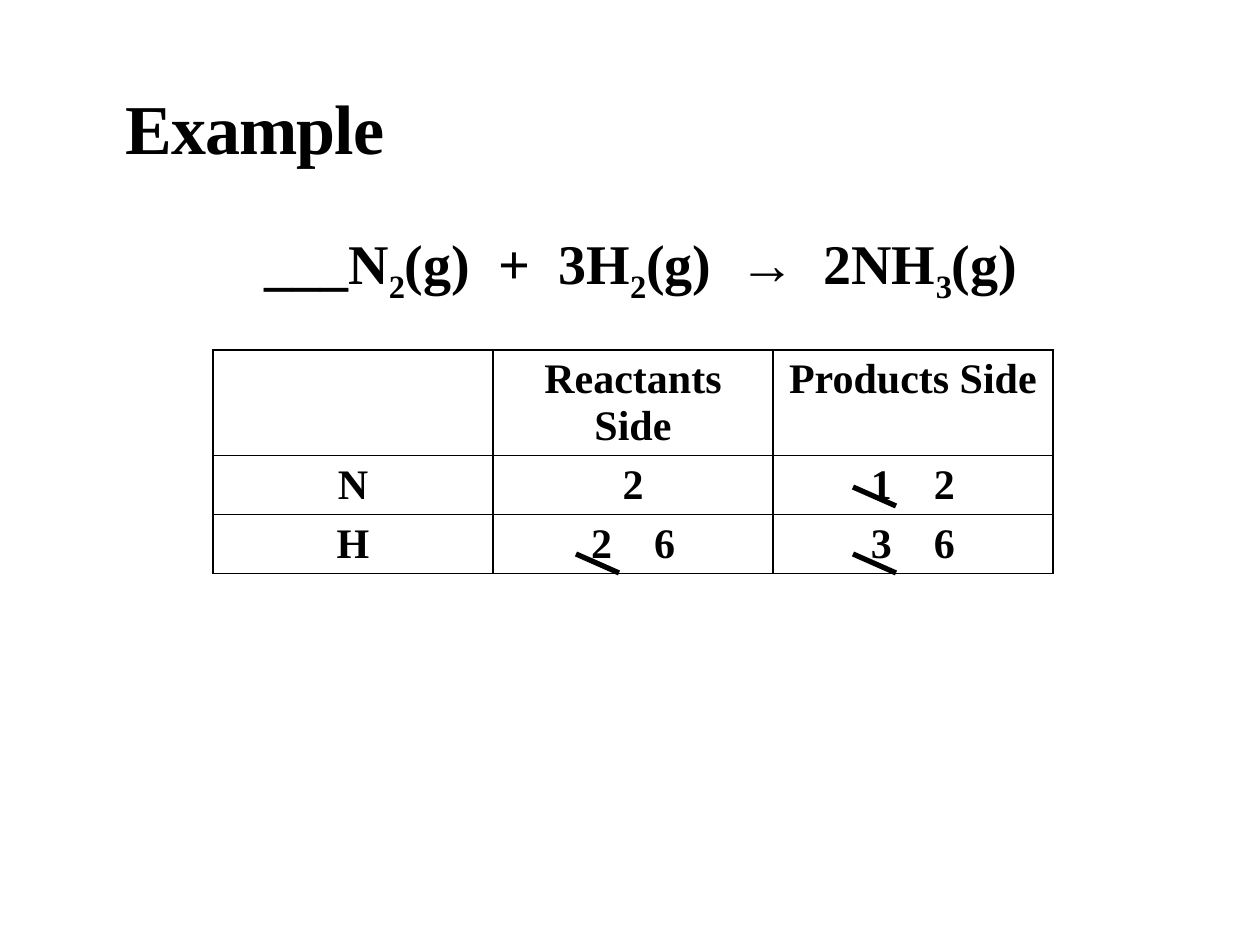
from pptx import Presentation
from pptx.dml.color import RGBColor
from pptx.enum.shapes import MSO_CONNECTOR as Connector
from pptx.enum.text import MSO_ANCHOR as Anchor, MSO_AUTO_SIZE as AutoSize, PP_ALIGN as Align
from pptx.oxml.ns import qn
from pptx.util import Pt
from lxml.etree import SubElement

PX = 914400 / 126
COLORS = {"ink": "000000", "paper": "FFFFFF", "bullet": "D34817"}
FONT = "Times New Roman"


def px(length):
    return round(length * PX)


def rgb(name):
    return RGBColor.from_string(COLORS[name])


def write(para, text, size=24, bold=True, color="ink", baseline=0, spacing=0):
    """Add one formatted span; baseline is in percent, spacing in points."""
    span = para.add_run()
    span.text = text
    font = span.font
    font.name, font.size, font.bold = FONT, Pt(size), bold
    font.color.rgb = rgb(color)
    props = span._r.get_or_add_rPr()
    if baseline:
        props.set("baseline", str(baseline * 1000))
    if spacing:
        props.set("spc", str(round(spacing * 100)))


class SlideBuilder:
    def __init__(self, deck):
        self.page = deck.slides.add_slide(deck.slide_layouts[1])
        self.page.background.fill.solid()
        self.page.background.fill.fore_color.rgb = rgb("paper")

    def place(self, box, left, top, width, height, anchor):
        box.left, box.top, box.width, box.height = map(px, (left, top, width, height))
        frame = box.text_frame
        frame.word_wrap = True
        frame.auto_size = AutoSize.NONE
        frame.vertical_anchor = anchor
        return frame

    def title(self, text, *area):
        para = self.place(self.page.shapes.title, *area, Anchor.BOTTOM).paragraphs[0]
        para.alignment = Align.LEFT
        para.line_spacing = 0.85
        write(para, text, size=40, spacing=-0.5)

    def equation(self, parts, *area):
        """Write the parts in turn, with every second one as a subscript."""
        frame = self.place(self.page.placeholders[1], *area, Anchor.TOP)
        frame.margin_left = frame.margin_right = 0
        para = frame.paragraphs[0]
        props = para._p.get_or_add_pPr()
        props.set("marL", str(px(13)))
        props.set("indent", str(px(-13)))
        SubElement(SubElement(props, qn("a:buClr")), qn("a:srgbClr"), val=COLORS["bullet"])
        SubElement(props, qn("a:buChar"), char=" ")
        para.alignment = Align.CENTER
        para.line_spacing = 0.9
        para.space_before, para.space_after = Pt(0), Pt(2)
        for index, part in enumerate(parts):
            write(para, part, size=32, baseline=-25 if index % 2 else 0)

    def border(self, cell):
        props = cell._tc.get_or_add_tcPr()
        for position, side in enumerate(("lnL", "lnR", "lnT", "lnB")):
            line = SubElement(props, qn(f"a:{side}"), w=str(Pt(1)))
            fill = SubElement(line, qn("a:solidFill"))
            SubElement(fill, qn("a:srgbClr"), val=COLORS["ink"])
            props.insert(position, line)

    def table(self, rows, left, top, width, heights):
        table = self.page.shapes.add_table(
            len(rows), len(rows[0]), px(left), px(top), px(width), px(sum(heights))).table
        table.first_row = table.horz_banding = False
        for row, height, values in zip(table.rows, heights, rows):
            row.height = px(height)
            for cell, value in zip(row.cells, values):
                cell.fill.solid()
                cell.fill.fore_color.rgb = rgb("paper")
                self.border(cell)
                para = cell.text_frame.paragraphs[0]
                para.alignment = Align.CENTER
                if isinstance(value, tuple):
                    old, new = value
                    write(para, old)
                    write(para, " ", spacing=18)  # wide gap between old and new count
                    write(para, new)
                elif value:
                    write(para, value)

    def strike(self, left, top, width=43, height=19):
        line = self.page.shapes.add_connector(
            Connector.STRAIGHT, px(left), px(top), px(left + width), px(top + height))
        line.line.color.rgb = rgb("ink")
        line.line.width = Pt(3)
        SubElement(line._element.spPr, qn("a:effectLst"))


def main():
    deck = Presentation()
    deck.slide_width, deck.slide_height = px(1260), px(945)
    slide = SlideBuilder(deck)

    # Heading and equation
    slide.title("Example", 113, 39, 1040, 136)
    slide.equation(["___N", "2", "(g)  +  3H", "2", "(g)  →  2NH", "3", "(g)"],
                   113, 223, 1040, 585)

    # Atom count; pairs hold the old and the new number
    slide.table([["", "Reactants Side", "Products Side"],
                 ["N", "2", ("1", "2")],
                 ["H", ("2", "6"), ("3", "6")]],
                213, 350, 840, [105, 59, 59])

    # Strokes through the old numbers
    for left, top in ((853, 487), (853, 554), (576, 554)):
        slide.strike(left, top)

    deck.save("out.pptx")


if __name__ == "__main__":
    main()
